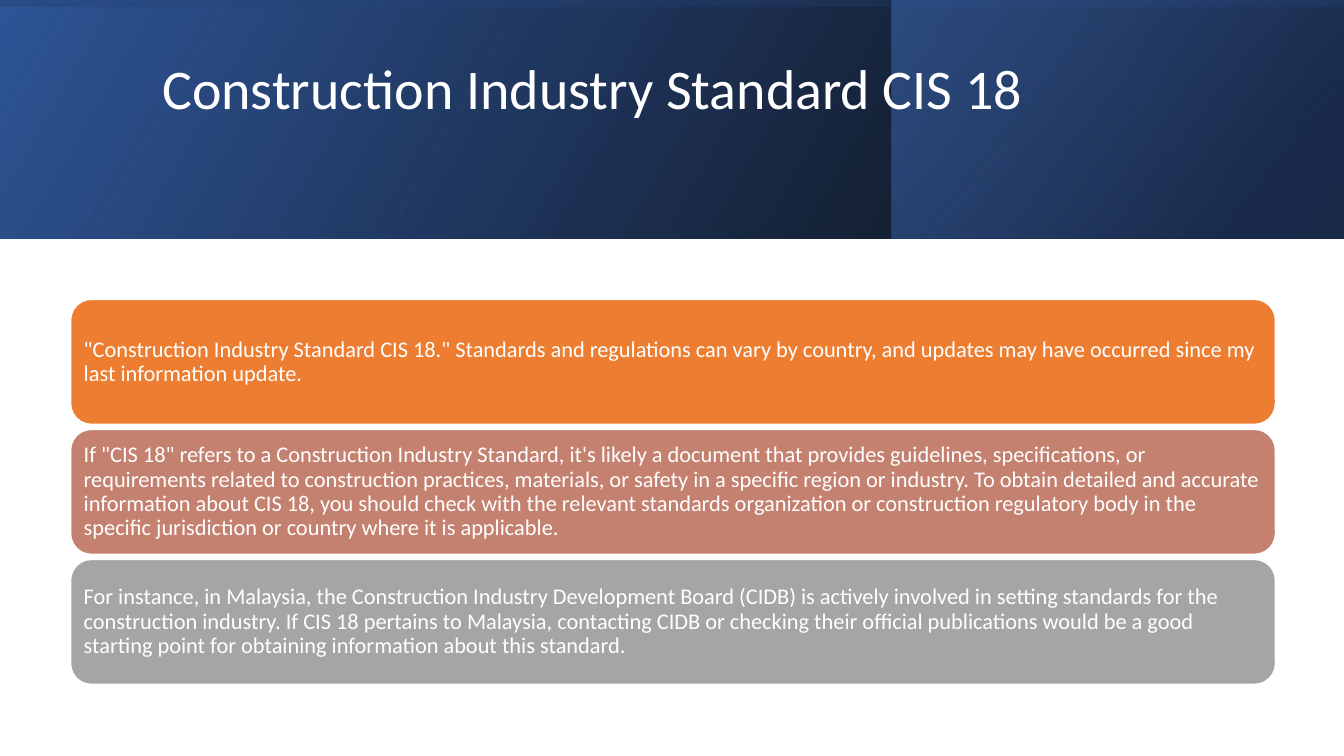
from dataclasses import dataclass

from lxml import etree
from pptx import Presentation
from pptx import util as u
from pptx.dml.color import RGBColor
from pptx.enum import shapes, text
from pptx.oxml.ns import qn


@dataclass(frozen=True)
class Theme:
    font: str = "Calibri"
    title_size: int = 40
    body_size: int = 16
    white: str = "FFFFFF"
    black: str = "000000"
    blue: str = "2F5597"
    navy: str = "203864"
    bright_blue: str = "4472C4"
    orange: str = "ED7D31"
    clay: str = "C48170"
    gray: str = "A5A5A5"


THEME = Theme()
TITLE = "Construction Industry Standard CIS 18"
CARDS = [
    (THEME.orange, '"Construction Industry Standard CIS 18." Standards and regulations can vary '
     "by country, and updates may have occurred since my last information update."),
    (THEME.clay, 'If "CIS 18" refers to a Construction Industry Standard, it\'s likely a document '
     "that provides guidelines, specifications, or requirements related to construction practices, "
     "materials, or safety in a specific region or industry. To obtain detailed and accurate "
     "information about CIS 18, you should check with the relevant standards organization or "
     "construction regulatory body in the specific jurisdiction or country where it is applicable."),
    (THEME.gray, "For instance, in Malaysia, the Construction Industry Development Board (CIDB) is "
     "actively involved in setting standards for the construction industry. If CIS 18 pertains to "
     "Malaysia, contacting CIDB or checking their official publications would be a good starting "
     "point for obtaining information about this standard."),
]


def set_format(target, values):
    for name, value in values.items():
        setattr(target, name, value)


def inches(*lengths):
    return [u.Inches(length) for length in lengths]


def write_text(shape, content, size, inset_x, inset_y):
    frame = shape.text_frame
    set_format(frame, {
        "word_wrap": True,
        "auto_size": text.MSO_AUTO_SIZE.NONE,
        "vertical_anchor": text.MSO_ANCHOR.MIDDLE,
        "margin_left": u.Inches(inset_x),
        "margin_right": u.Inches(inset_x),
        "margin_top": u.Inches(inset_y),
        "margin_bottom": u.Inches(inset_y),
    })
    paragraph = frame.paragraphs[0]
    set_format(paragraph, {"alignment": text.PP_ALIGN.LEFT, "line_spacing": 0.9})
    run = paragraph.add_run()
    run.text = content
    set_format(run.font, {"name": THEME.font, "size": u.Pt(size)})
    run.font.color.rgb = RGBColor.from_string(THEME.white)
    return paragraph


def add_gradient_panel(slide, box, stops, angle, rotation=0):
    panel = slide.shapes.add_shape(shapes.MSO_SHAPE.RECTANGLE, *inches(*box))
    panel.shadow.inherit = False
    panel.rotation = rotation
    panel._element.spPr.xfrm.set("flipH", "1")
    panel.line.fill.background()
    panel.fill.gradient()
    panel.fill.gradient_angle = 360 - angle
    for stop, (position, color, opacity) in zip(panel.fill.gradient_stops, stops):
        stop.position = position
        stop.color.rgb = RGBColor.from_string(color)
        color_element = panel._element.spPr.findall(".//" + qn("a:srgbClr"))[-1]
        etree.SubElement(color_element, qn("a:alpha"), val=str(opacity * 1000))


def add_banner(slide, left, top, width, height):
    accent_left = 8.84
    middle_x, middle_y = left + width / 2, top + height / 2
    upright_box = (middle_x - height / 2, middle_y - width / 2, height, width)
    add_gradient_panel(slide, (left, top, width, height),
                       [(0, THEME.black, 96), (1, THEME.blue, 100)], 330)
    add_gradient_panel(slide, (accent_left, top, left + width - accent_left, height),
                       [(0.19, THEME.navy, 68), (1, THEME.bright_blue, 48)], 320)
    add_gradient_panel(slide, upright_box,
                       [(0.23, THEME.blue, 16), (0.99, THEME.black, 45)], 350, 270)


def place_title(slide, left, top, width, height):
    title = slide.shapes.title
    set_format(title, dict(zip(("left", "top", "width", "height"),
                               inches(left, top, width, height))))
    paragraph = write_text(title, TITLE, THEME.title_size, 0.1, 0.05)
    paragraph.add_line_break()
    etree.SubElement(paragraph._p, qn("a:endParaRPr"), sz=str(THEME.title_size * 100))
    tree = slide.shapes._spTree
    tree.remove(title._element)
    tree.append(title._element)


def add_cards(slide, left, top, width, height, gap=0.05):
    card_height = (height - gap * (len(CARDS) - 1)) / len(CARDS)
    for index, (color, content) in enumerate(CARDS):
        card_top = top + index * (card_height + gap)
        card = slide.shapes.add_shape(shapes.MSO_SHAPE.ROUNDED_RECTANGLE,
                                      *inches(left, card_top, width, card_height))
        card.shadow.inherit = False
        card.fill.solid()
        card.fill.fore_color.rgb = RGBColor.from_string(color)
        card.line.color.rgb = RGBColor.from_string(THEME.white)
        card.line.width = u.Pt(1)
        write_text(card, content, THEME.body_size, 0.07, 0.07)


def main():
    presentation = Presentation()
    set_format(presentation, {"slide_width": u.Inches(13.33), "slide_height": u.Inches(7.5)})
    slide = presentation.slides.add_slide(presentation.slide_layouts[5])
    add_banner(slide, 0, 0, 13.33, 2.37)
    place_title(slide, 1.51, 0.38, 10.63, 1.72)
    add_cards(slide, 0.7, 2.97, 11.95, 3.82)
    presentation.save("out.pptx")


if __name__ == "__main__":
    main()
